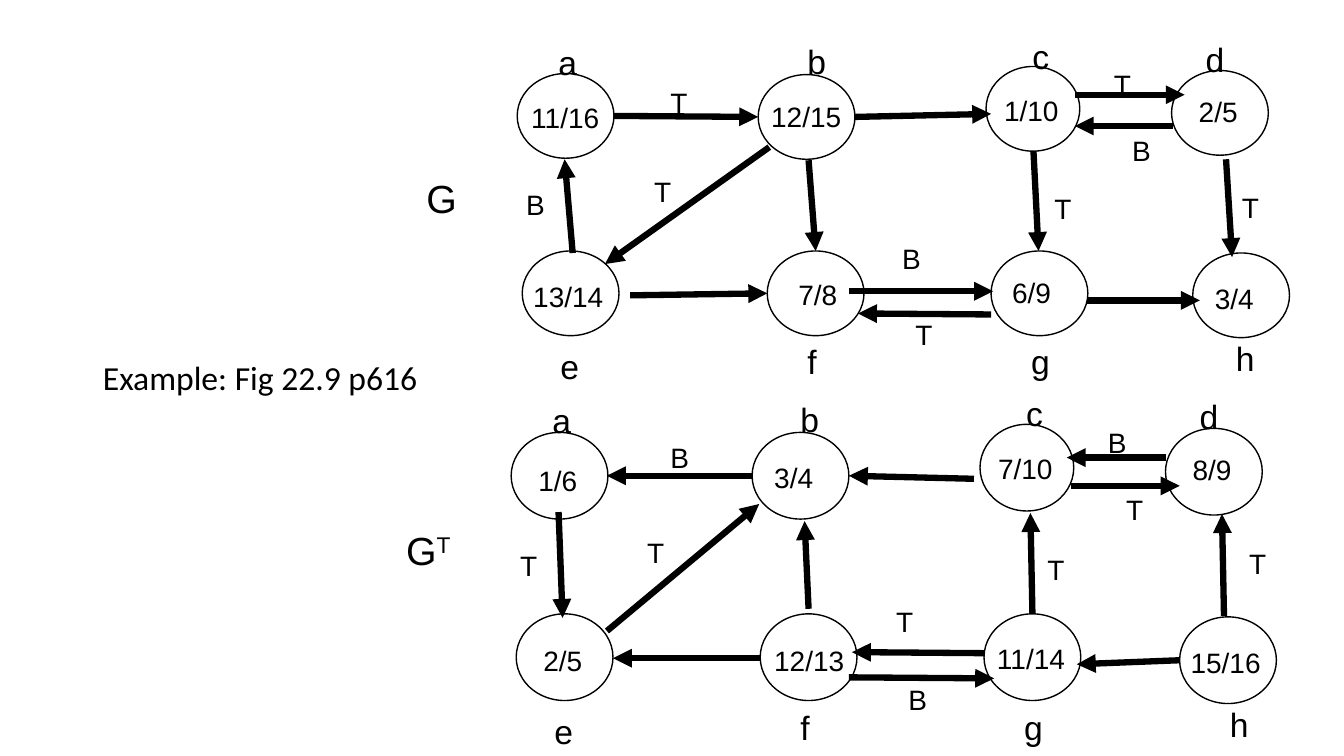
"""Build a slide showing depth-first search on a directed graph and its transpose."""
from dataclasses import dataclass
from typing import Any, NamedTuple

from lxml import etree
from pptx import Presentation
from pptx import util as u
from pptx.dml.color import RGBColor
from pptx.enum import shapes, text
from pptx.oxml.ns import qn

BLACK = RGBColor(0x00, 0x00, 0x00)
WHITE = RGBColor(0xFF, 0xFF, 0xFF)
NAME_WIDTHS = {"f": 0.29, "g": 0.36, "h": 0.36}
VALUE_WIDTHS = {3: 0.59, 4: 0.75, 5: 0.9}
MARK_WIDTHS = {"T": 0.37, "B": 0.39}
FRAME_FORMAT = {
    "word_wrap": False,
    "auto_size": text.MSO_AUTO_SIZE.SHAPE_TO_FIT_TEXT,
    "vertical_anchor": text.MSO_ANCHOR.TOP,
}


class Point(NamedTuple):
    x: float
    y: float


class Node(NamedTuple):
    name: str
    value: str
    corner: Point
    name_at: Point
    value_at: Point
    width: float = 0.96


class Edge(NamedTuple):
    start: Point
    end: Point


class Mark(NamedTuple):
    kind: str
    at: Point


@dataclass
class Graph:
    caption_at: Point
    caption_width: float
    superscript: str
    node_height: float
    nodes: list[Node]
    edges: list[Edge]
    marks: list[Mark]


P, N, E, M = Point, Node, Edge, Mark

GRAPH = Graph(
    P(4.13, 1.68), 0.51, "", 0.84,
    [
        N("a", "11/16", P(5.13, 0.73), P(5.44, 0.37), P(5.17, 0.95)),
        N("b", "12/15", P(7.52, 0.74), P(7.91, 0.36), P(7.55, 0.94)),
        N("c", "1/10", P(9.78, 0.66), P(10.14, 0.31), P(9.86, 0.88), 0.93),
        N("d", "2/5", P(11.62, 0.7), P(11.86, 0.34), P(11.79, 0.89)),
        N("e", "13/14", P(5.18, 2.49), P(5.46, 3.38), P(5.19, 2.72)),
        N("f", "7/8", P(7.61, 2.49), P(7.91, 3.33), P(7.82, 2.7)),
        N("g", "6/9", P(9.83, 2.49), P(10.13, 3.33), P(9.94, 2.68)),
        N("h", "3/4", P(11.83, 2.51), P(12.16, 3.3), P(11.95, 2.74)),
    ],
    [
        E(P(6.09, 1.15), P(7.52, 1.16)), E(P(8.48, 1.16), P(9.83, 1.13)),
        E(P(10.66, 0.94), P(11.75, 0.94)), E(P(11.63, 1.25), P(10.66, 1.25)),
        E(P(5.68, 2.51), P(5.6, 1.58)), E(P(7.63, 1.46), P(6, 2.62)),
        E(P(8.02, 1.59), P(8.09, 2.49)), E(P(10.25, 1.5), P(10.3, 2.49)),
        E(P(12.16, 1.58), P(12.22, 2.55)), E(P(6.25, 2.93), P(7.61, 2.91)),
        E(P(8.42, 2.89), P(9.85, 2.89)), E(P(9.83, 3.12), P(8.51, 3.11)),
        E(P(10.78, 2.98), P(11.9, 2.98)),
    ],
    [
        M("T", P(6.55, 0.8)), M("T", P(10.95, 0.62)), M("B", P(11.13, 1.27)),
        M("B", P(5.12, 1.81)), M("T", P(6.39, 1.68)), M("T", P(10.36, 1.85)),
        M("T", P(12.22, 1.84)), M("B", P(8.85, 2.35)), M("T", P(8.98, 3.1)),
    ],
)

TRANSPOSE = Graph(
    P(3.93, 5.17), 0.67, "T", 0.86,
    [
        N("a", "1/6", P(5.07, 4.29), P(5.38, 3.92), P(5.24, 4.55)),
        N("b", "3/4", P(7.46, 4.29), P(7.84, 3.91), P(7.58, 4.52)),
        N("c", "7/10", P(9.72, 4.21), P(10.08, 3.85), P(9.8, 4.43), 0.93),
        N("d", "8/9", P(11.56, 4.25), P(11.8, 3.88), P(11.73, 4.44)),
        N("e", "2/5", P(5.12, 6.09), P(5.4, 7), P(5.29, 6.33)),
        N("f", "12/13", P(7.54, 6.09), P(7.84, 6.96), P(7.58, 6.33)),
        N("g", "11/14", P(9.76, 6.09), P(10.06, 6.96), P(9.79, 6.31)),
        N("h", "15/16", P(11.7, 6.12), P(12.1, 6.93), P(11.71, 6.35)),
    ],
    [
        E(P(7.46, 4.72), P(6.02, 4.72)), E(P(9.66, 4.75), P(8.42, 4.72)),
        E(P(11.56, 4.54), P(10.58, 4.54)), E(P(10.62, 4.82), P(11.7, 4.82)),
        E(P(5.54, 5.08), P(5.58, 6.13)), E(P(6.02, 6.26), P(7.53, 5)),
        E(P(8.02, 6.04), P(7.98, 5.17)), E(P(10.24, 6.09), P(10.22, 5.09)),
        E(P(12.14, 6.11), P(12.12, 5.1)), E(P(7.54, 6.53), P(6.08, 6.53)),
        E(P(9.76, 6.48), P(8.45, 6.47)), E(P(8.42, 6.72), P(9.86, 6.73)),
        E(P(11.7, 6.55), P(10.68, 6.59)),
    ],
    [
        M("B", P(6.55, 4.32)), M("B", P(10.89, 4.17)), M("T", P(11.07, 4.84)),
        M("T", P(5.06, 5.39)), M("T", P(6.32, 5.26)), M("T", P(10.29, 5.43)),
        M("T", P(12.29, 5.37)), M("T", P(8.79, 5.95)), M("B", P(8.91, 6.72)),
    ],
)


def apply_format(target: Any, values: dict[str, Any]) -> None:
    for name, value in values.items():
        setattr(target, name, value)


def add_run(p: Any, words: str, size: int, font: str = "Arial") -> Any:
    r = p.add_run()
    r.text = words
    apply_format(r.font, {"name": font, "size": u.Pt(size)})
    r.font.color.rgb = BLACK
    return r


def add_label(parent: Any, words: str, at: Point, width: float, size: int) -> Any:
    height = 0.1 + size / 60
    sp = parent.add_textbox(*map(u.Inches, (*at, width, height)))
    apply_format(sp.text_frame, FRAME_FORMAT)
    p = sp.text_frame.paragraphs[0]
    add_run(p, words, size)
    return p


def add_node(parent: Any, node: Node, height: float) -> None:
    sp = parent.add_shape(shapes.MSO_SHAPE.OVAL,
                          *map(u.Inches, (*node.corner, node.width, height)))
    sp.shadow.inherit = False
    sp.fill.solid()
    sp.fill.fore_color.rgb = WHITE
    sp.line.color.rgb = BLACK
    sp.line.width = u.Pt(1)


def add_arrow(parent: Any, edge: Edge) -> None:
    cxn = parent.add_connector(shapes.MSO_CONNECTOR.STRAIGHT,
                               *map(u.Inches, (*edge.start, *edge.end)))
    cxn.line.color.rgb = BLACK
    cxn.line.width = u.Pt(4.5)
    etree.SubElement(cxn.line._get_or_add_ln(), qn("a:tailEnd"), type="triangle")
    etree.SubElement(cxn._element.spPr, qn("a:effectLst"))


def add_graph(s: Any, graph: Graph) -> None:
    group = s.shapes.add_group_shape().shapes
    for node in graph.nodes:
        add_node(group, node, graph.node_height)
    for edge in graph.edges:
        add_arrow(group, edge)
    for node in graph.nodes:
        add_label(group, node.name, node.name_at, NAME_WIDTHS.get(node.name, 0.39), 24)
        add_label(group, node.value, node.value_at, VALUE_WIDTHS[len(node.value)], 20)
    for mark in graph.marks:
        add_label(group, mark.kind, mark.at, MARK_WIDTHS[mark.kind], 20)
    p = add_label(s.shapes, "G", graph.caption_at, graph.caption_width, 28)
    if graph.superscript:
        r = add_run(p, graph.superscript, 28)
        r._r.get_or_add_rPr().set("baseline", "30000")


def add_title(s: Any) -> None:
    sp = s.shapes.title
    apply_format(sp, {"left": u.Inches(0.92), "top": u.Inches(3.49),
                      "width": u.Inches(3.54), "height": u.Inches(0.5)})
    apply_format(sp.text_frame, FRAME_FORMAT | {"word_wrap": True})
    p = sp.text_frame.paragraphs[0]
    p.alignment = text.PP_ALIGN.LEFT
    add_run(p, "Example: Fig 22.9 p616", 24, "Calibri")


def main() -> None:
    prs = Presentation()
    apply_format(prs, {"slide_width": u.Inches(13.33), "slide_height": u.Inches(7.5)})
    s = prs.slides.add_slide(prs.slide_layouts[5])
    for graph in (GRAPH, TRANSPOSE):
        add_graph(s, graph)
    add_title(s)
    prs.save("out.pptx")


if __name__ == "__main__":
    main()
